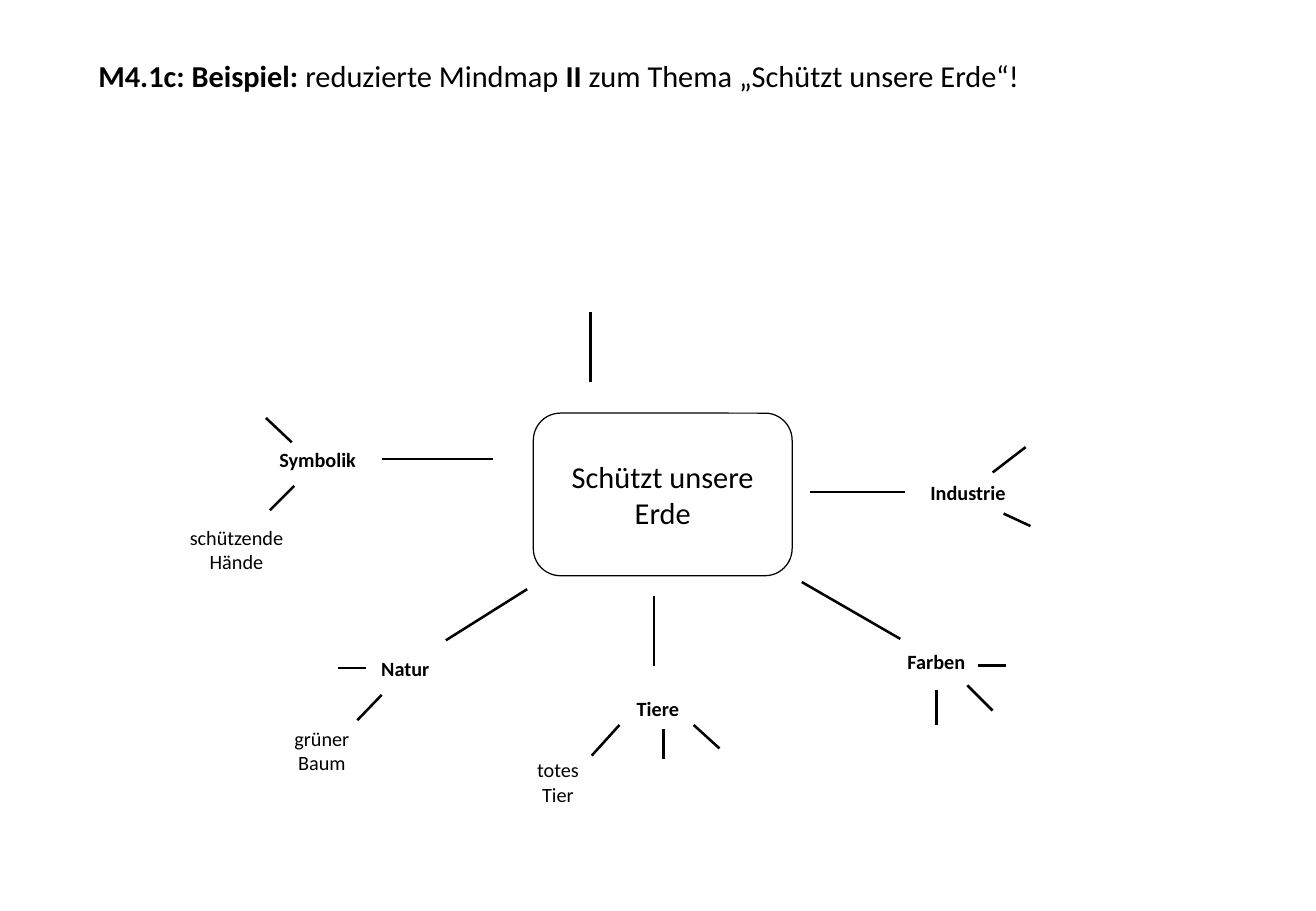
from dataclasses import dataclass

from pptx import Presentation
from pptx import util as u
from pptx.dml.color import RGBColor
from pptx.enum import shapes, text
from pptx.oxml.ns import qn
from lxml import etree

BLACK = RGBColor(0, 0, 0)
WHITE = RGBColor(255, 255, 255)
FONT = "Calibri"
LABEL_HEIGHT = 0.76
LEAF_HEIGHT = 1.27


@dataclass(frozen=True)
class Line:
    x1: float
    y1: float
    x2: float
    y2: float


@dataclass(frozen=True)
class Box:
    lines: tuple[str, ...]
    left: float
    top: float
    width: float


@dataclass(frozen=True)
class Branch:
    lines: tuple[Line, ...]
    label: Box | None = None
    leaf: Box | None = None


BRANCHES = (
    Branch((Line(12.34, 7.98, 12.34, 6.53),)),
    Branch(
        (Line(10.31, 9.6, 7.98, 9.6), Line(6.1, 9.25, 5.56, 8.74),
         Line(5.64, 10.67, 6.15, 10.16)),
        Box(("Symbolik",), 5.59, 9.22, 2.13),
        Box(("schützende Hände",), 3.56, 10.85, 2.77),
    ),
    Branch(
        (Line(18.92, 10.29, 16.94, 10.29), Line(21.54, 11, 20.98, 10.74),
         Line(21.44, 9.35, 20.75, 9.88)),
        Box(("Industrie",), 19.2, 9.91, 2.11),
    ),
    Branch(
        (Line(9.32, 13.39, 11.02, 12.32), Line(7.65, 13.97, 7.06, 13.97),
         Line(7.47, 15.06, 7.98, 14.53)),
        Box(("Natur",), 7.72, 13.59, 1.52),
        Box(("grüner", "Baum"), 5.28, 15.06, 2.9),
    ),
    Branch(
        (Line(13.67, 13.92, 13.67, 12.47), Line(13.87, 15.88, 13.87, 15.24),
         Line(12.37, 15.8, 12.95, 15.16), Line(15.04, 15.65, 14.5, 15.16)),
        Box(("Tiere",), 13.06, 14.43, 1.4),
        Box(("totes", "Tier"), 9.91, 15.72, 3.51),
    ),
    Branch(
        (Line(16.76, 12.17, 18.82, 13.36), Line(20.75, 14.86, 20.22, 14.33),
         Line(21.03, 13.92, 20.45, 13.92), Line(19.58, 15.16, 19.58, 14.43)),
        Box(("Farben",), 18.72, 13.46, 1.73),
    ),
)

TITLE_RUNS = (
    ("M4.1c: Beispiel:", True),
    (" reduzierte Mindmap ", False),
    ("II ", True),
    ("zum Thema „Schützt unsere Erde“!", False),
)


def set_font(font, size: float, bold: bool = False) -> None:
    font.name = FONT
    font.size = u.Pt(size)
    font.bold = bold
    font.color.rgb = BLACK


def add_title(s) -> None:
    sp = s.shapes.title
    sp.left, sp.top, sp.width, sp.height = map(u.Cm, (1.8, 1.07, 20.12, 1.02))
    tf = sp.text_frame
    tf.word_wrap = False
    tf.auto_size = text.MSO_AUTO_SIZE.SHAPE_TO_FIT_TEXT
    tf.vertical_anchor = text.MSO_ANCHOR.TOP
    p = tf.paragraphs[0]
    p.alignment = text.PP_ALIGN.LEFT
    for wording, bold in TITLE_RUNS:
        r = p.add_run()
        r.text = wording
        set_font(r.font, 18, bold)


def add_topic(s) -> None:
    sp = s.shapes.add_shape(shapes.MSO_SHAPE.ROUNDED_RECTANGLE,
                            u.Cm(11.15), u.Cm(8.64), u.Cm(5.41), u.Cm(3.4))
    sp.shadow.inherit = False
    sp.fill.solid()
    sp.fill.fore_color.rgb = WHITE
    sp.line.color.rgb = BLACK
    sp.line.width = u.Pt(0.75)
    tf = sp.text_frame
    tf.word_wrap = True
    tf.vertical_anchor = text.MSO_ANCHOR.MIDDLE
    p = tf.paragraphs[0]
    p.text = "Schützt unsere Erde"
    p.alignment = text.PP_ALIGN.CENTER
    set_font(p.font, 18)


def add_box(s, box: Box, height: float, is_label: bool) -> None:
    sp = s.shapes.add_textbox(u.Cm(box.left), u.Cm(box.top),
                              u.Cm(box.width), u.Cm(height))
    tf = sp.text_frame
    tf.word_wrap = not is_label
    tf.auto_size = text.MSO_AUTO_SIZE.SHAPE_TO_FIT_TEXT
    tf.text = "\n".join(box.lines)
    for p in tf.paragraphs:
        p.alignment = text.PP_ALIGN.LEFT if is_label else text.PP_ALIGN.CENTER
        set_font(p.font, 12, is_label)


def add_line(s, line: Line) -> None:
    cx = s.shapes.add_connector(shapes.MSO_CONNECTOR.STRAIGHT,
                                u.Cm(line.x1), u.Cm(line.y1),
                                u.Cm(line.x2), u.Cm(line.y2))
    cx.line.color.rgb = BLACK
    cx.line.width = u.Pt(1.5)
    etree.SubElement(cx._element.spPr, qn("a:effectLst"))


def main() -> None:
    prs = Presentation()
    prs.slide_width, prs.slide_height = u.Cm(27.51), u.Cm(19.05)
    s = prs.slides.add_slide(prs.slide_layouts[5])
    add_title(s)
    add_topic(s)
    for branch in BRANCHES:
        for line in branch.lines:
            add_line(s, line)
        if branch.label:
            add_box(s, branch.label, LABEL_HEIGHT, True)
        if branch.leaf:
            add_box(s, branch.leaf, LEAF_HEIGHT, False)
    prs.save("out.pptx")


if __name__ == "__main__":
    main()
